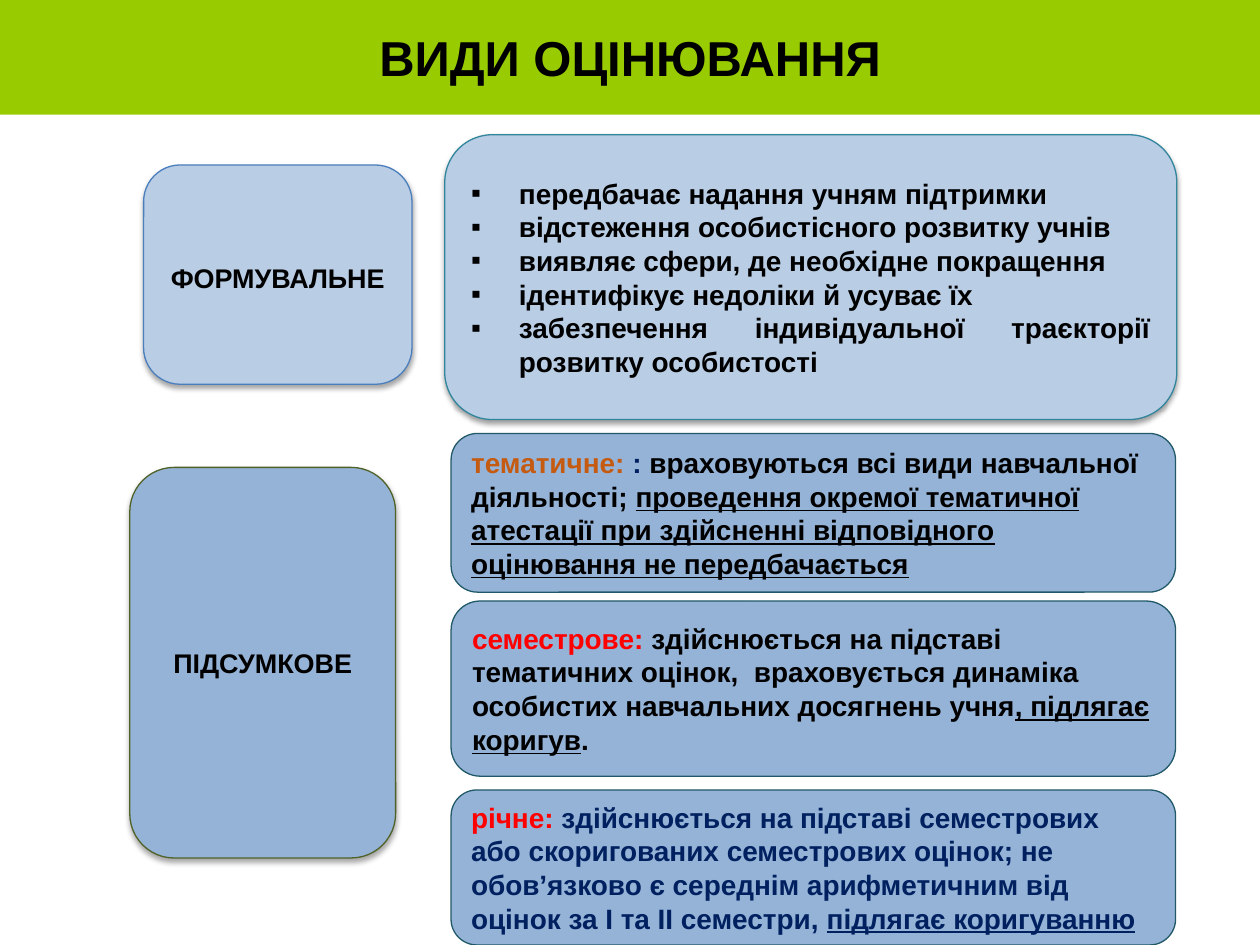
import pptx
import pptx.util
import pptx.dml.color
import pptx.enum.shapes
import pptx.enum.text
import pptx.oxml.ns
from lxml import etree

COLORS = {
    "black": "000000", "navy": "002060", "red": "FF0000", "orange": "C55A11",
    "header": "99CC00", "pale": "B9CDE5", "mid": "95B3D7",
    "blue_line": "4B7EBC", "olive_line": "4F6228",
    "teal_line": "31859C", "dark_line": "215968",
}
W, H = 10, 7.5

TITLE = "ВИДИ ОЦІНЮВАННЯ"
FORMATIVE = [
    "передбачає надання учням підтримки",
    "відстеження особистісного розвитку учнів",
    "виявляє сфери, де необхідне покращення",
    "ідентифікує недоліки й усуває їх",
    "забезпечення індивідуальної траєкторії розвитку особистості",
]
# Each run: text, colour, underlined
THEMATIC = [
    ("тематичне: ", "orange", False),
    (": ", "navy", False),
    ("враховуються всі види навчальної діяльності; ", "black", False),
    ("проведення окремої тематичної атестації при здійсненні відповідного "
     "оцінювання не передбачається", "black", True),
]
SEMESTER = [
    ("семестрове: ", "red", False),
    ("здійснюється на підставі тематичних оцінок,  враховується динаміка "
     "особистих навчальних досягнень учня", "black", False),
    (", підлягає коригув", "black", True),
    (".", "black", False),
]
ANNUAL = [
    ("річне: ", "red", False),
    ("здійснюється на підставі семестрових або скоригованих семестрових "
     "оцінок; не обов’язково є середнім арифметичним від оцінок за І та ІІ "
     "семестри, ", "navy", False),
    ("підлягає коригуванню", "navy", True),
]

# Columns: left, width. Rows: top, height.
COLS = {"full": (0, W), "formative": (1.14, 2.13), "summative": (1.03, 2.11),
        "features": (3.53, 5.81), "kinds": (3.58, 5.75)}
ROWS = {"header": (0, 0.91), "formative": (1.31, 1.74), "features": (1.07, 2.26),
        "summative": (3.71, 3.1), "thematic": (3.44, 1.26),
        "semester": (4.77, 1.39), "annual": (6.27, 1.23)}

# Column, row, fill, line, shadow (opacity %, distance pt), paragraphs, text format
BOXES = [
    ("formative", "formative", "pale", "blue_line", (35, 1.8),
     ["ФОРМУВАЛЬНЕ"], {"size": 15.4, "align": "CENTER", "spacing": 22.2}),
    ("summative", "summative", "mid", "olive_line", (35, 1.8),
     ["ПІДСУМКОВЕ"], {"size": 15.4, "align": "CENTER"}),
    ("features", "features", "pale", "teal_line", (38, 1.6),
     FORMATIVE, {"align": "JUSTIFY", "bullet": "▪"}),
    ("kinds", "thematic", "mid", "dark_line", None, [THEMATIC], {}),
    ("kinds", "semester", "mid", "dark_line", None, [SEMESTER], {}),
    ("kinds", "annual", "mid", "dark_line", None, [ANNUAL], {}),
    ("full", "header", "header", None, None,
     [TITLE], {"size": 28, "align": "CENTER"}),
]


def rgb(name):
    return pptx.dml.color.RGBColor.from_string(COLORS[name])


def add_bullet(p, char, indent=0.38):
    pPr = p._p.get_or_add_pPr()
    emu = pptx.util.Inches(indent)
    pPr.set("marL", str(emu))
    pPr.set("indent", str(-emu))
    etree.SubElement(pPr, pptx.oxml.ns.qn("a:buFont"), typeface="Arial")
    etree.SubElement(pPr, pptx.oxml.ns.qn("a:buChar"), char=char)


def add_shadow(sp, opacity, distance, blur=3.1):
    qn = pptx.oxml.ns.qn
    effects = sp._element.spPr.find(qn("a:effectLst"))
    outer = etree.SubElement(
        effects, qn("a:outerShdw"), blurRad=str(pptx.util.Pt(blur)),
        dist=str(pptx.util.Pt(distance)), dir="5400000", rotWithShape="0")
    color = etree.SubElement(outer, qn("a:srgbClr"), val=COLORS["black"])
    etree.SubElement(color, qn("a:alpha"), val=str(opacity * 1000))


def write(tf, paragraphs, size=16, align="LEFT", spacing=None, bullet=None):
    """Fill a text frame; a paragraph is a string or a list of runs."""
    tf.word_wrap = True
    tf.vertical_anchor = pptx.enum.text.MSO_ANCHOR.MIDDLE
    for i, runs in enumerate(paragraphs):
        p = tf.add_paragraph() if i else tf.paragraphs[0]
        p.alignment = getattr(pptx.enum.text.PP_ALIGN, align)
        if spacing:
            p.line_spacing = pptx.util.Pt(spacing)
        if bullet:
            add_bullet(p, bullet)
        if isinstance(runs, str):
            runs = [(runs, "black", False)]
        for text, color, underline in runs:
            r = p.add_run()
            r.text = text
            r.font.name = "Arial"
            r.font.size = pptx.util.Pt(size)
            r.font.bold = True
            r.font.underline = underline
            r.font.color.rgb = rgb(color)


def add_box(s, col, row, fill, line, shadow, paragraphs, fmt):
    (left, width), (top, height) = COLS[col], ROWS[row]
    kinds = pptx.enum.shapes.MSO_SHAPE
    sp = s.shapes.add_shape(
        kinds.ROUNDED_RECTANGLE if line else kinds.RECTANGLE,
        *map(pptx.util.Inches, (left, top, width, height)))
    sp.shadow.inherit = False
    sp.fill.solid()
    sp.fill.fore_color.rgb = rgb(fill)
    if line:
        sp.line.color.rgb = rgb(line)
        sp.line.width = pptx.util.Pt(0.75)
    else:
        sp.line.fill.background()
    if shadow:
        add_shadow(sp, *shadow)
    write(sp.text_frame, paragraphs, **fmt)


def main():
    prs = pptx.Presentation()
    prs.slide_width = pptx.util.Inches(W)
    prs.slide_height = pptx.util.Inches(H)
    s = prs.slides.add_slide(prs.slide_layouts[6])
    for box in BOXES:
        add_box(s, *box)
    prs.save("out.pptx")


if __name__ == "__main__":
    main()
